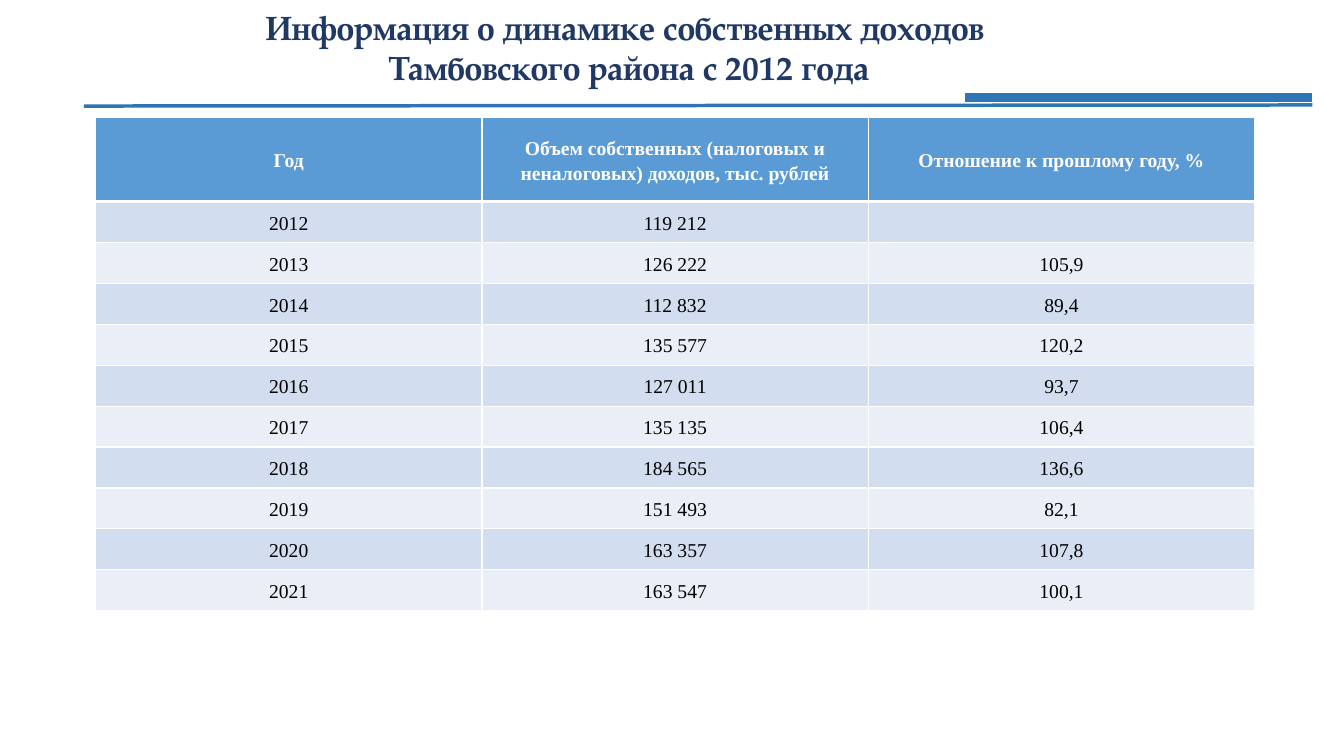
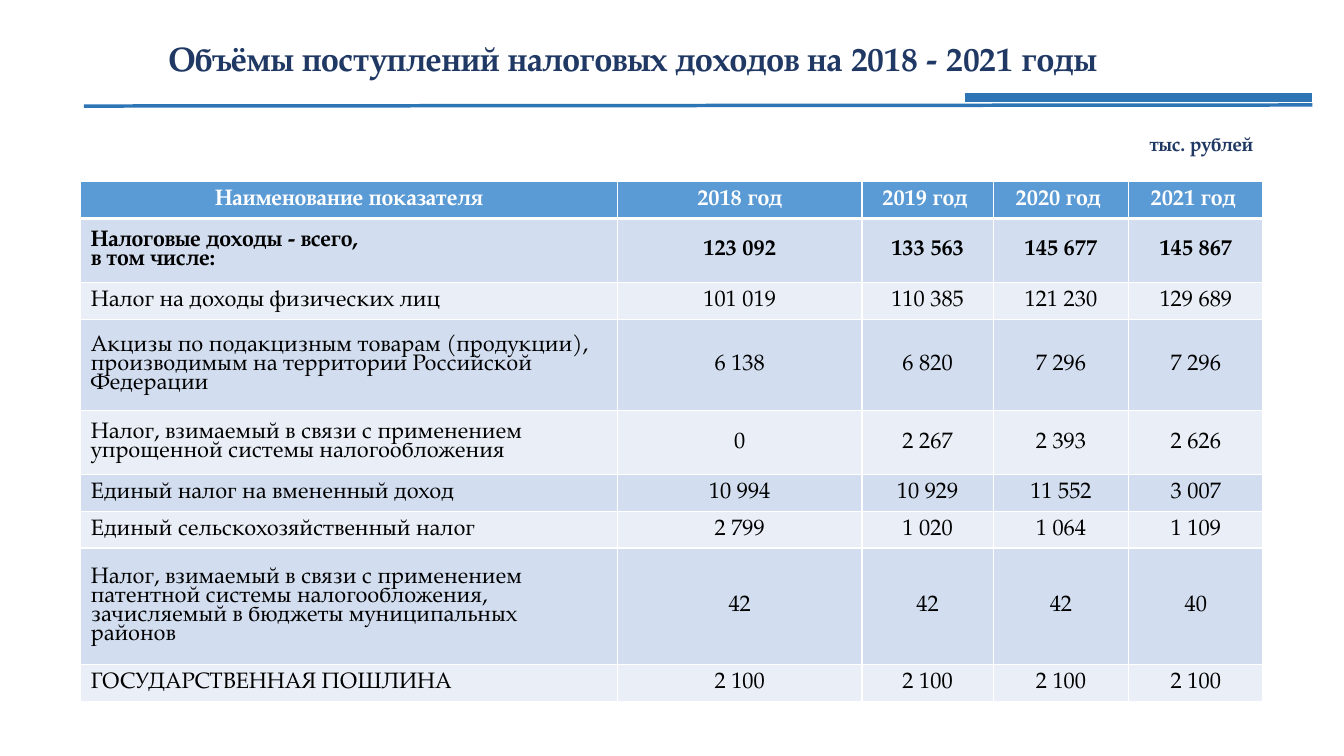
from lxml.etree import SubElement
from pptx import Presentation
from pptx.dml.color import RGBColor
from pptx.enum.shapes import MSO_CONNECTOR
from pptx.enum.text import MSO_ANCHOR, PP_ALIGN
from pptx.oxml.ns import qn
from pptx.util import Emu, Pt

# Shared look
NAVY, RULE_BLUE, HEADER_BLUE = "203864", "2E75B6", "5B9BD5"
BANDS = ["EAEFF7", "D2DEEF"]
WHITE, BLACK = "FFFFFF", "000000"
SERIF, TIMES = "TeX Gyre Pagella", "Times New Roman"
TITLE_STYLE = {"name": SERIF, "size": Pt(24), "bold": True}
NOTE_STYLE = {**TITLE_STYLE, "size": Pt(14)}

INCOME_HEADER = ["Год", "Объем собственных (налоговых и неналоговых) доходов, тыс. рублей",
                 "Отношение к прошлому году, %"]
INCOME_BY_YEAR = [
    ["2012", "119 212", ""],
    ["2013", "126 222", "105,9"],
    ["2014", "112 832", "89,4"],
    ["2015", "135 577", "120,2"],
    ["2016", "127 011", "93,7"],
    ["2017", "135 135", "106,4"],
    ["2018", "184 565", "136,6"],
    ["2019", "151 493", "82,1"],
    ["2020", "163 357", "107,8"],
    ["2021", "163 547", "100,1"],
]
TAX_HEADER = ["Наименование показателя", "2018 год", "2019 год ", "2020 год ", "2021 год "]
TAX_REVENUES = [
    ["Налоговые доходы - всего,\nв том числе:", "123 092", "133 563", "145 677", "145 867"],
    ["Налог на доходы физических лиц", "101 019", "110 385", "121 230", "129 689"],
    ["Акцизы по подакцизным товарам (продукции), производимым на территории "
     "Российской Федерации", "6 138", "6 820", "7 296", "7 296"],
    ["Налог, взимаемый в связи с применением упрощенной системы налогообложения",
     "0", "2 267", "2 393", "2 626"],
    ["Единый налог на вмененный доход", "10 994", "10 929", "11 552", "3 007"],
    ["Единый сельскохозяйственный налог", "2 799", "1 020", "1 064", "1 109"],
    ["Налог, взимаемый в связи с применением патентной системы налогообложения, "
     "зачисляемый в бюджеты муниципальных районов", "42", "42", "42", "40"],
    ["ГОСУДАРСТВЕННАЯ ПОШЛИНА", "2 100", "2 100", "2 100", "2 100"],
]


def px(length):
    return Emu(length * 9525)


def color(hex_value):
    return RGBColor.from_string(hex_value)


def write_text(frame, text, style, ink, align, spacing=1.0):
    frame.text = text
    for paragraph in frame.paragraphs:
        paragraph.alignment = align
        paragraph.line_spacing = spacing
        for run in paragraph.runs:
            for attribute, value in style.items():
                setattr(run.font, attribute, value)
            run.font.color.rgb = color(ink)


def add_label(slide, box, text, style, align, anchor):
    frame = slide.shapes.add_textbox(*map(px, box)).text_frame
    frame.word_wrap = True
    frame.vertical_anchor = anchor
    write_text(frame, text, style, NAVY, align)


def add_rule(slide, start, end, weight):
    rule = slide.shapes.add_connector(MSO_CONNECTOR.STRAIGHT, *map(px, start + end))
    rule.line.color.rgb = color(RULE_BLUE)
    rule.line.width = Pt(weight)
    SubElement(rule._element.spPr, qn("a:effectLst"))


def add_titled_slide(deck, title, box):
    slide = deck.slides.add_slide(deck.slide_layouts[6])
    add_label(slide, box, title, TITLE_STYLE, PP_ALIGN.CENTER, MSO_ANCHOR.MIDDLE)
    add_rule(slide, (80, 101), (1250, 100), 2.5)
    add_rule(slide, (919, 93), (1250, 93), 6)
    return slide


def set_borders(cell, widths):
    properties = cell._tc.get_or_add_tcPr()
    for side, width in widths.items():
        line = SubElement(properties, qn(f"a:ln{side}"), w=str(Pt(width)))
        fill = SubElement(line, qn("a:solidFill"))
        SubElement(fill, qn("a:srgbClr"), val=WHITE)


def add_banded_table(slide, corner, widths, heights, rows, style, spacing,
                     margins=None, label_align=PP_ALIGN.CENTER, bold_rows=(0,)):
    size = (sum(widths), sum(heights))
    table = slide.shapes.add_table(len(rows), len(widths), *map(px, corner + size)).table
    for column, width in zip(table.columns, widths):
        column.width = px(width)
    for r, (texts, height) in enumerate(zip(rows, heights)):
        table.rows[r].height = px(height)
        row_style = {**style, "bold": r in bold_rows}
        for c, text in enumerate(texts):
            cell = table.cell(r, c)
            cell.vertical_anchor = MSO_ANCHOR.MIDDLE
            for attribute, value in (margins or {}).items():
                setattr(cell, attribute, px(value))
            # A thick line parts the header from the body
            set_borders(cell, {"L": 1, "R": 1, "T": 3 if r == 1 else 1, "B": 3 if r == 0 else 1})
            cell.fill.solid()
            cell.fill.fore_color.rgb = color(BANDS[r % 2] if r else HEADER_BLUE)
            align = label_align if r and c == 0 else PP_ALIGN.CENTER
            write_text(cell.text_frame, text, row_style, BLACK if r else WHITE, align, spacing)


def main():
    deck = Presentation()
    deck.slide_width, deck.slide_height = px(1280), px(720)

    # Own income by year
    income = add_titled_slide(
        deck, "Информация о динамике собственных доходов\v Тамбовского района с 2012 года",
        (19, 0, 1152, 89))
    add_banded_table(
        income, (91, 112), [368] * 3, [80] + [39] * len(INCOME_BY_YEAR),
        [INCOME_HEADER] + INCOME_BY_YEAR, {"name": TIMES, "size": Pt(14)}, 1.15,
        margins={"margin_left": 7, "margin_right": 7, "margin_top": 0, "margin_bottom": 0})

    # Tax revenues by kind
    taxes = add_titled_slide(
        deck, "Объёмы поступлений налоговых доходов на 2018 - 2021 годы", (27, 7, 1151, 97))
    add_label(taxes, (1039, 121, 164, 33), "тыс. рублей", NOTE_STYLE,
              PP_ALIGN.RIGHT, MSO_ANCHOR.TOP)
    add_banded_table(
        taxes, (77, 173), [511, 233, 125, 129, 128], [35, 61, 35, 87, 61, 35, 35, 111, 35],
        [TAX_HEADER] + TAX_REVENUES, {"name": SERIF, "size": Pt(16)}, 0.84,
        label_align=PP_ALIGN.LEFT, bold_rows=(0, 1))

    deck.save("out.pptx")


if __name__ == "__main__":
    main()
